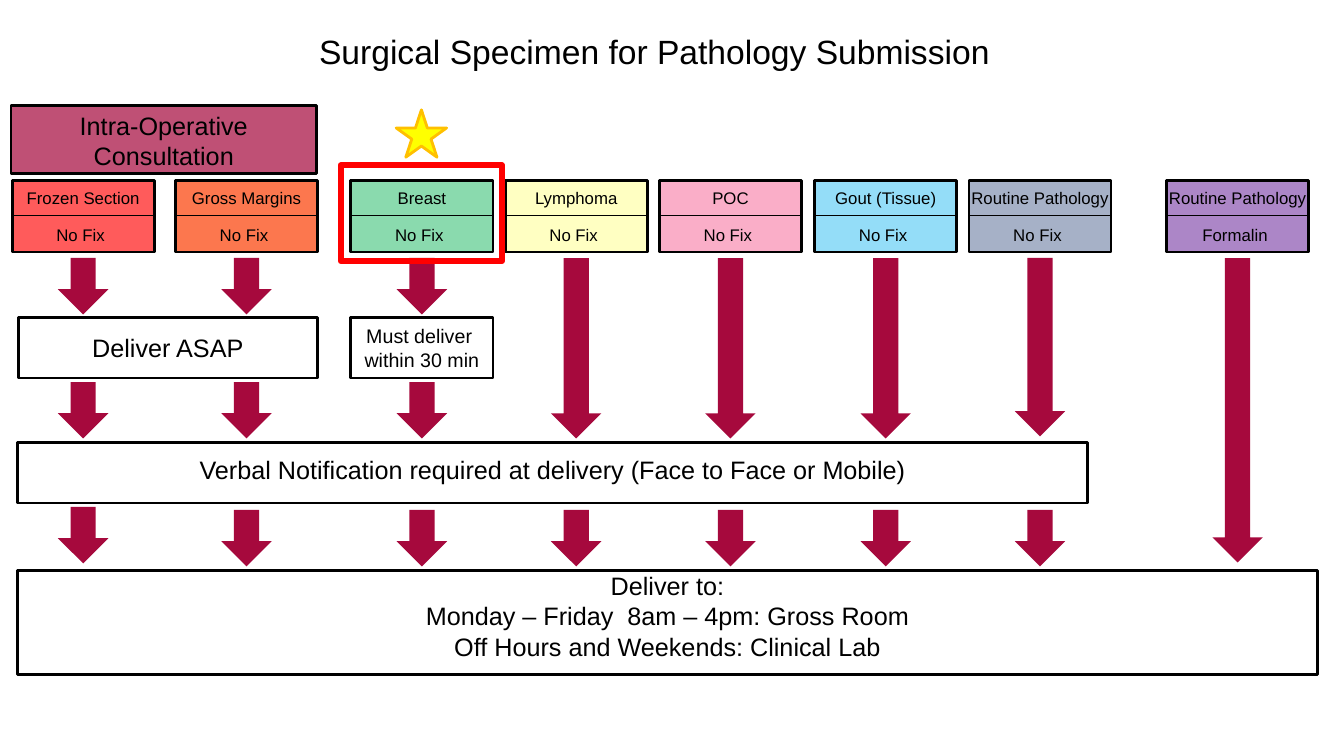
from lxml.etree import SubElement
from pptx import Presentation
from pptx.dml.color import RGBColor
from pptx.enum.shapes import MSO_CONNECTOR, MSO_SHAPE
from pptx.enum.text import MSO_ANCHOR, MSO_AUTO_SIZE, PP_ALIGN
from pptx.oxml.ns import qn
from pptx.util import Inches, Pt

BLACK = RGBColor(0x00, 0x00, 0x00)
RED = RGBColor(0xFF, 0x00, 0x00)
CRIMSON = RGBColor(0xA6, 0x09, 0x3D)
CORAL = RGBColor(0xFF, 0x5B, 0x5B)
ORANGE = RGBColor(0xFC, 0x77, 0x4E)
GREEN = RGBColor(0x00, 0xB0, 0x50)
PALE_YELLOW = RGBColor(0xFF, 0xFF, 0x79)
PINK = RGBColor(0xF5, 0x40, 0x7C)
SKY = RGBColor(0x00, 0xB0, 0xF0)
NAVY = RGBColor(0x00, 0x20, 0x60)
PURPLE = RGBColor(0x70, 0x30, 0xA0)
YELLOW = RGBColor(0xFF, 0xFF, 0x00)
GOLD = RGBColor(0xFF, 0xC0, 0x00)

CARD_TOP, CARD_W, CARD_H = 1.79, 1.41, 0.71
ARROW_W, ARROW_H = 0.5, 0.56
ARROW_TOP = 2.56
NOTIFY_ARROW_TOP = 3.79
FINAL_ARROW_TOP = 5.06
SHORT = [(ARROW_TOP, ARROW_H), (NOTIFY_ARROW_TOP, ARROW_H), (FINAL_ARROW_TOP, ARROW_H)]
LONG = [(ARROW_TOP, 1.79), (FINAL_ARROW_TOP, ARROW_H)]

SPECIMENS = [
    (0.12, "Frozen Section", "No Fix", CORAL, 100, SHORT[:2] + [(5.03, ARROW_H)]),
    (1.74, "Gross Margins", "No Fix", ORANGE, 100, SHORT),
    (3.48, "Breast", "No Fix", GREEN, 46, SHORT),
    (5.01, "Lymphoma", "No Fix", PALE_YELLOW, 45, LONG),
    (6.54, "POC", "No Fix", PINK, 42, LONG),
    (8.08, "Gout (Tissue)", "No Fix", SKY, 42, LONG),
    (9.61, "Routine Pathology", "No Fix", NAVY, 35, [(ARROW_TOP, 1.77), LONG[1]]),
    (11.57, "Routine Pathology", "Formalin", PURPLE, 58, [(ARROW_TOP, 3.02)]),
]


def write(sp, lines, size, inset=(0, 0), anchor=MSO_ANCHOR.TOP):
    side, top = (Inches(v) for v in inset)
    tf = sp.text_frame
    frame_format = {
        "word_wrap": True,
        "auto_size": MSO_AUTO_SIZE.NONE,
        "vertical_anchor": anchor,
        "margin_left": side,
        "margin_right": side,
        "margin_top": top,
        "margin_bottom": 0,
    }
    for name, value in frame_format.items():
        setattr(tf, name, value)
    for i, line in enumerate(lines):
        p = tf.add_paragraph() if i else tf.paragraphs[0]
        p.alignment = PP_ALIGN.CENTER
        r = p.add_run()
        r.text = line
        for name, value in {"name": "Arial", "size": Pt(size)}.items():
            setattr(r.font, name, value)
        r.font.color.rgb = BLACK


def add_shape(shapes, kind, at, fill=None, line=None, width=2, opacity=100):
    sp = shapes.add_shape(kind, *(Inches(v) for v in at))
    sp.shadow.inherit = False
    if fill is None:
        sp.fill.background()
    else:
        sp.fill.solid()
        sp.fill.fore_color.rgb = fill
    if opacity < 100:
        color = sp.fill._xPr.find(qn("a:solidFill")).find(qn("a:srgbClr"))
        SubElement(color, qn("a:alpha")).set("val", str(opacity * 1000))
    if line is None:
        sp.line.fill.background()
    else:
        sp.line.color.rgb = line
        sp.line.width = Pt(width)
    return sp


def add_box(shapes, at, lines, size, fill=None, opacity=100, **text_format):
    sp = add_shape(shapes, MSO_SHAPE.RECTANGLE, at, fill, BLACK, opacity=opacity)
    write(sp, lines, size, **text_format)


def add_label(shapes, at, text):
    write(shapes.add_textbox(*(Inches(v) for v in at)), [text], 12)


def add_divider(shapes, left, top):
    line = shapes.add_connector(MSO_CONNECTOR.STRAIGHT, Inches(left), Inches(top),
                                Inches(left + CARD_W), Inches(top))
    line.line.color.rgb = BLACK
    line.line.width = Pt(0.75)
    SubElement(line._element.spPr, qn("a:effectLst"))


def add_card(s, left, specimen, fixative, fill, opacity):
    shapes = s.shapes.add_group_shape().shapes
    add_shape(shapes, MSO_SHAPE.RECTANGLE, (left, CARD_TOP, CARD_W, CARD_H),
              fill, BLACK, opacity=opacity)
    add_divider(shapes, left, CARD_TOP + 0.35)
    add_label(shapes, (left - 0.17, 1.86, 1.75, 0.3), specimen)
    add_label(shapes, (left - 0.17, 2.23, 1.7, 0.37), fixative)


def add_arrow(s, card_left, top, height):
    left = card_left + (CARD_W - ARROW_W) / 2
    add_shape(s.shapes, MSO_SHAPE.DOWN_ARROW, (left, top, ARROW_W, height), CRIMSON)


def add_title(s, text):
    title = s.shapes.title
    place = {"left": 0.15, "top": 0.31, "width": 12.68, "height": 0.67}
    for name, value in place.items():
        setattr(title, name, Inches(value))
    write(title, [text], 24)


def main():
    prs = Presentation()
    prs.slide_width, prs.slide_height = Inches(13.33), Inches(7.5)
    s = prs.slides.add_slide(prs.slide_layouts[5])
    add_title(s, "Surgical Specimen for Pathology Submission")

    for left, specimen, fixative, fill, opacity, arrows in SPECIMENS:
        add_card(s, left, specimen, fixative, fill, opacity)
        for top, height in arrows:
            add_arrow(s, left, top, height)

    add_box(s.shapes, (0.11, 1.05, 3.03, 0.67), ["Intra-Operative Consultation"], 18,
            CRIMSON, 71, inset=(0.23, 0.04))
    add_box(s.shapes, (0.18, 3.15, 2.97, 0.6), ["Deliver ASAP"], 18,
            anchor=MSO_ANCHOR.MIDDLE)
    add_box(s.shapes, (3.48, 3.15, CARD_W, 0.6), ["Must deliver ", "within 30 min"], 14,
            anchor=MSO_ANCHOR.MIDDLE)
    add_box(s.shapes, (0.17, 4.39, 10.62, 0.6),
            ["Verbal Notification required at delivery (Face to Face or Mobile)"], 18,
            inset=(0.12, 0.12))
    add_box(s.shapes, (0.17, 5.66, 12.9, 1.03),
            ["Deliver to:", "Monday – Friday  8am – 4pm: Gross Room",
             "Off Hours and Weekends: Clinical Lab"], 18)

    add_shape(s.shapes, MSO_SHAPE.RECTANGLE, (3.38, 1.64, 1.6, 0.95), line=RED, width=4.25)
    add_shape(s.shapes, MSO_SHAPE.STAR_5_POINT, (3.93, 1.09, 0.5, 0.47), YELLOW, GOLD)
    prs.save("out.pptx")


if __name__ == "__main__":
    main()
